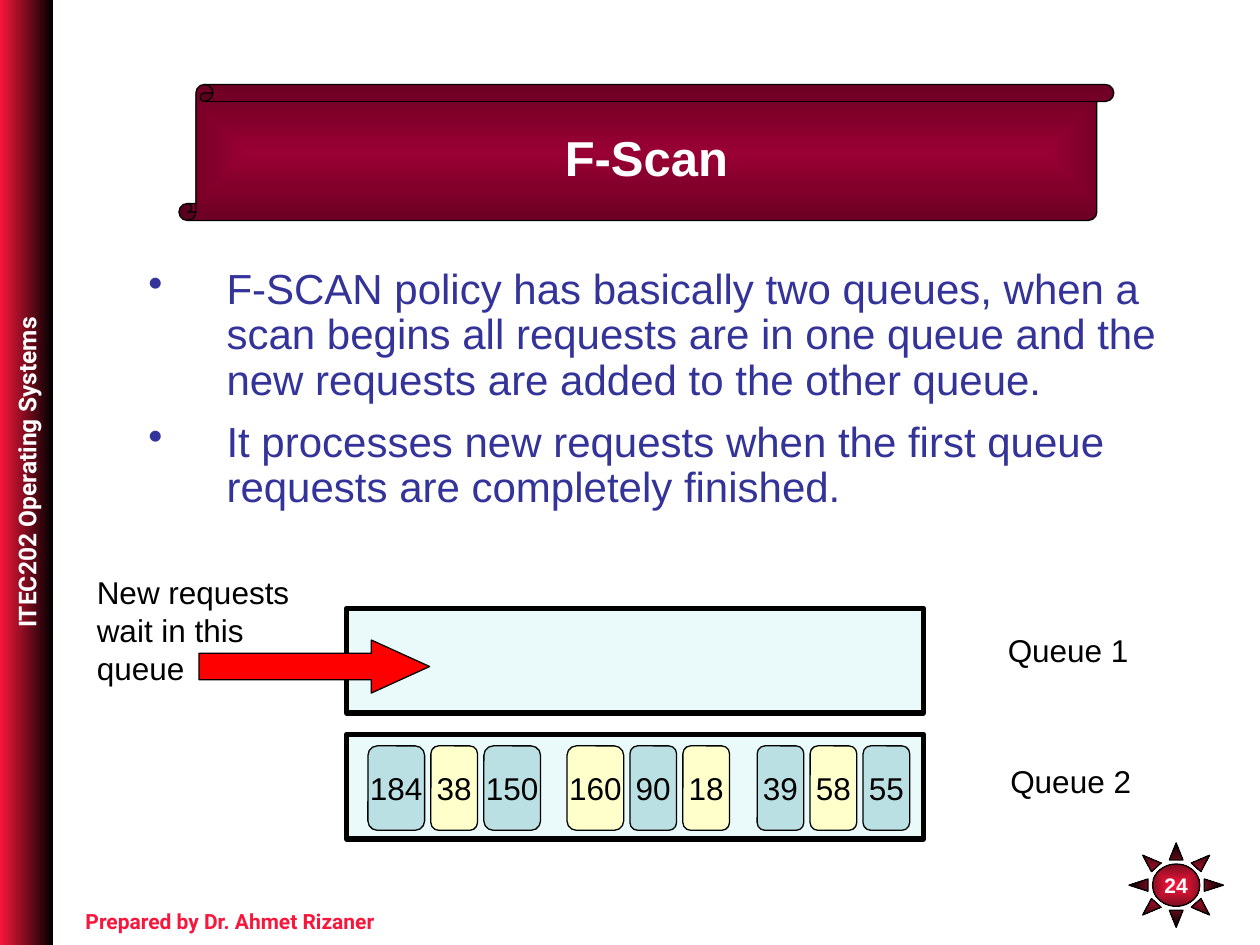
from lxml.etree import SubElement
from pptx import Presentation
from pptx.dml.color import RGBColor
from pptx.enum.shapes import MSO_SHAPE
from pptx.enum.text import MSO_ANCHOR, PP_ALIGN
from pptx.oxml.ns import qn
from pptx.util import Inches, Pt


def color(code):
    return RGBColor.from_string(code)


class Deck:
    face, size, ink = "Arial", 18, "000000"

    def __init__(self, wide, high):
        self.prs = Presentation()
        self.prs.slide_width, self.prs.slide_height = Inches(wide), Inches(high)
        self.slide = self.prs.slides.add_slide(self.prs.slide_layouts[6])

    def label(self, par, text, size=None, ink=None, bold=False, face=None):
        par.text = text
        font = par.font
        font.name, font.size, font.bold = face or self.face, Pt(size or self.size), bold
        font.color.rgb = color(ink or self.ink)

    def text(self, box, lines, **style):
        frame = self.slide.shapes.add_textbox(*map(Inches, box)).text_frame
        frame.word_wrap = False
        for i, line in enumerate(lines):
            par = frame.add_paragraph() if i else frame.paragraphs[0]
            self.label(par, line, **style)

    def bullets(self, box, items, indent, **style):
        frame = self.slide.shapes.add_textbox(*map(Inches, box)).text_frame
        frame.word_wrap = True
        for i, item in enumerate(items):
            par = frame.add_paragraph() if i else frame.paragraphs[0]
            par.line_spacing, par.space_after = 0.9, Pt(9.6)
            props = par._p.get_or_add_pPr()
            props.set("marL", str(Inches(indent)))
            props.set("indent", str(-Inches(indent)))
            SubElement(props, qn("a:buChar"), char="•")
            self.label(par, item, **style)

    def shape(self, kind, box, fill=None, line=0.75, text="", **style):
        shape = self.slide.shapes.add_shape(kind, *map(Inches, box))
        shape.shadow.inherit = False
        if fill:
            shape.fill.solid()
            shape.fill.fore_color.rgb = color(fill)
        if line:
            shape.line.color.rgb = color("000000")
            shape.line.width = Pt(line)
        else:
            shape.line.fill.background()
        if text:
            frame = shape.text_frame
            frame.word_wrap, frame.vertical_anchor = False, MSO_ANCHOR.MIDDLE
            frame.paragraphs[0].alignment = PP_ALIGN.CENTER
            self.label(frame.paragraphs[0], text, **style)
        return shape

    def fade(self, shape, start, end, center=False):
        fill = shape.fill
        fill.gradient()
        fill.gradient_angle = 270
        for stop, code, pos in zip(fill.gradient_stops, (start, end), (0, 1)):
            stop.color.rgb, stop.position = color(code), pos
        if center:
            grad = shape._element.spPr.find(qn("a:gradFill"))
            grad.remove(grad.find(qn("a:lin")))
            way = SubElement(grad, qn("a:path"), {"path": "rect"})
            SubElement(way, qn("a:fillToRect"), dict.fromkeys("ltrb", "50000"))


def main():
    deck = Deck(10, 7.5)
    red, white = "F7173C", "FFFFFF"

    # Side bar, footer and page number
    bar = deck.shape(MSO_SHAPE.RECTANGLE, (-3.54, 3.54, 7.5, 0.42), line=0,
                     text="ITEC202 Operating Systems", size=14, ink=white,
                     bold=True, face="Roboto")
    bar.rotation = 270
    deck.fade(bar, red, "000000")
    deck.text((0.58, 7.16, 2.79, 0.3), ["Prepared by Dr. Ahmet Rizaner"],
              size=12, ink=red, bold=True, face="Roboto")
    sun = deck.shape(MSO_SHAPE.SUN, (8.96, 6.69, 0.75, 0.67),
                     text="24", size=12, ink=white, bold=True)
    deck.fade(sun, red, "000000", center=True)

    # Body and title
    deck.bullets((1.08, 2.08, 8.33, 2.25), [
        "F-SCAN policy has basically two queues, when a scan begins all requests "
        "are in one queue and the new requests are added to the other queue.",
        "It processes new requests when the first queue requests are completely finished.",
    ], 0.62, size=24, ink="333399")
    scroll = deck.shape(MSO_SHAPE.VERTICAL_SCROLL, (1.42, 0.67, 7.42, 1.08),
                        text="F-Scan", size=28, ink=white, bold=True)
    deck.fade(scroll, "990033", "6D0024", center=True)

    # Queues and their labels
    for i, left in enumerate((7.9, 7.92)):
        deck.shape(MSO_SHAPE.RECTANGLE, (2.75, 4.83 + i, 4.58, 0.83), "EAFAFA", 3)
        deck.text((left, 4.96 + 1.04 * i, 1.16, 0.4), [f"Queue {i + 1}"])

    # Requests in queue 2: three groups, colours alternate throughout
    gap, count = 0.05, 0
    groups = {2.92: (184, 38, 150), 4.5: (160, 90, 18), 6.01: (39, 58, 55)}
    for left, group in groups.items():
        for track in group:
            wide = 0.45 if track > 99 else 0.37
            deck.shape(MSO_SHAPE.ROUNDED_RECTANGLE, (left, 5.92, wide, 0.67),
                       ("BBE0E3", "FFFFCC")[count % 2], text=str(track))
            left += wide + gap
            count += 1

    # Arrow into queue 1
    arrow = deck.shape(MSO_SHAPE.RIGHT_ARROW, (1.58, 5.08, 1.83, 0.42), "FF0000")
    arrow.adjustments[1] = 1.1
    deck.text((0.67, 4.5, 1.73, 1), ["New requests", "wait in this", "queue"])

    deck.prs.save("out.pptx")


if __name__ == "__main__":
    main()
